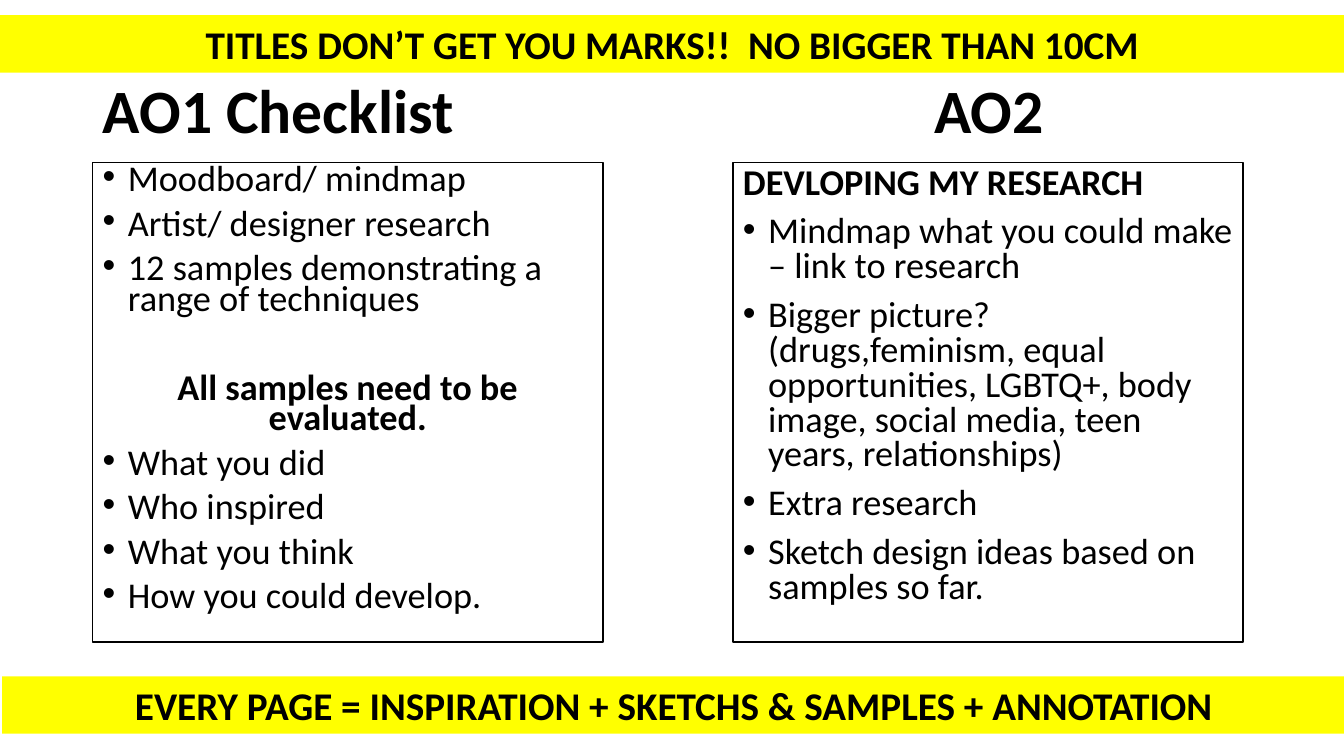
from dataclasses import dataclass

from lxml import etree
from pptx import Presentation
from pptx.dml.color import RGBColor
from pptx.enum.shapes import MSO_SHAPE
from pptx.enum.text import MSO_ANCHOR, MSO_AUTO_SIZE, PP_ALIGN
from pptx.oxml.ns import qn
from pptx.util import Inches, Pt

RECT = MSO_SHAPE.RECTANGLE
LEFT, CENTER = PP_ALIGN.LEFT, PP_ALIGN.CENTER
TOP, MIDDLE = MSO_ANCHOR.TOP, MSO_ANCHOR.MIDDLE
NO_FIT = MSO_AUTO_SIZE.NONE
FONT = "Calibri"
BLACK, WHITE, YELLOW = "000000", "FFFFFF", "FFFF00"
HEADING_SIZE, BODY_SIZE, BANNER_SIZE = 44, 25.9, 28
PANEL_TOP, PANEL_W, PANEL_H = 1.61, 5.06, 4.76
HEADING_TOP, HEADING_H = 0.4, 1.45
BANNER_H = 0.57


@dataclass
class Line:
    text: str
    bullet: bool = True
    bold: bool = False
    align: PP_ALIGN = LEFT
    before: float = 10


@dataclass
class Panel:
    left: float
    spacing: float
    lines: list[Line]


@dataclass
class Banner:
    text: str
    left: float
    top: float
    width: float
    wrap: bool


PANELS = [
    Panel(0.92, 0.7, [
        Line("Moodboard/ mindmap"),
        Line("Artist/ designer research"),
        Line("12 samples demonstrating a range of techniques"),
        Line("All samples need to be evaluated.", False, True, CENTER, 42),
        Line("What you did"),
        Line("Who inspired"),
        Line("What you think"),
        Line("How you could develop."),
    ]),
    Panel(7.27, 0.8, [
        Line("DEVLOPING MY RESEARCH", False, True),
        Line("Mindmap what you could make – link to research"),
        Line("Bigger picture? (drugs,feminism, equal opportunities, LGBTQ+, "
             "body image, social media, teen years, relationships)"),
        Line("Extra research"),
        Line("Sketch design ideas based on samples so far."),
    ]),
]

BANNERS = [
    Banner("EVERY PAGE = INSPIRATION + SKETCHS & SAMPLES + ANNOTATION",
           0.02, 6.71, 13.32, False),
    Banner("TITLES DON’T GET YOU MARKS!!  NO BIGGER THAN 10CM",
           0, 0.15, 13.33, True),
]


def rgb(value: str) -> RGBColor:
    return RGBColor.from_string(value)


def add_run(p, text: str, size: float, bold: bool) -> None:
    r = p.add_run()
    r.text = text
    r.font.name = FONT
    r.font.size = Pt(size)
    r.font.bold = bold
    r.font.color.rgb = rgb(BLACK)


def add_bullet(p) -> None:
    p_pr = p._p.get_or_add_pPr()
    p_pr.set("marL", str(Inches(0.25)))
    p_pr.set("indent", str(Inches(-0.25)))
    etree.SubElement(p_pr, qn("a:buFont")).set("typeface", "Arial")
    etree.SubElement(p_pr, qn("a:buChar")).set("char", "•")


def set_frame(tf, anchor: MSO_ANCHOR, wrap: bool = True) -> None:
    tf.auto_size = NO_FIT
    tf.word_wrap = wrap
    tf.vertical_anchor = anchor


def fill_heading(sp, text: str, align: PP_ALIGN) -> None:
    set_frame(sp.text_frame, MIDDLE)
    p = sp.text_frame.paragraphs[0]
    p.alignment = align
    p.line_spacing = 0.9
    add_run(p, text, HEADING_SIZE, True)


def add_rect(slide, left: float, top: float, width: float, height: float,
             fill: str):
    sp = slide.shapes.add_shape(RECT, Inches(left), Inches(top),
                                Inches(width), Inches(height))
    sp.shadow.inherit = False
    sp.fill.solid()
    sp.fill.fore_color.rgb = rgb(fill)
    return sp


def add_panel(slide, panel: Panel) -> None:
    sp = add_rect(slide, panel.left, PANEL_TOP, PANEL_W, PANEL_H, WHITE)
    sp.line.color.rgb = rgb(BLACK)
    sp.line.width = Pt(1)
    tf = sp.text_frame
    set_frame(tf, TOP)
    for i, line in enumerate(panel.lines):
        p = tf.add_paragraph() if i else tf.paragraphs[0]
        p.alignment = line.align
        p.line_spacing = panel.spacing
        p.space_before = Pt(line.before if i else 0)
        if line.bullet:
            add_bullet(p)
        add_run(p, line.text, BODY_SIZE, line.bold)


def add_banner(slide, banner: Banner) -> None:
    sp = add_rect(slide, banner.left, banner.top, banner.width, BANNER_H,
                  YELLOW)
    sp.line.fill.background()
    set_frame(sp.text_frame, TOP, banner.wrap)
    p = sp.text_frame.paragraphs[0]
    p.alignment = CENTER
    add_run(p, banner.text, BANNER_SIZE, True)


def main() -> None:
    prs = Presentation()
    prs.slide_width, prs.slide_height = Inches(13.33), Inches(7.5)
    slide = prs.slides.add_slide(prs.slide_layouts[5])

    # Headings
    title = slide.shapes.title
    title.left, title.top = Inches(PANELS[0].left), Inches(HEADING_TOP)
    title.width, title.height = Inches(PANEL_W), Inches(HEADING_H)
    fill_heading(title, "AO1 Checklist", LEFT)
    second = slide.shapes.add_textbox(Inches(6.82), Inches(HEADING_TOP),
                                      Inches(5.98), Inches(HEADING_H))
    fill_heading(second, "AO2", CENTER)

    # Checklists
    for panel in PANELS:
        add_panel(slide, panel)

    # Yellow reminders
    for banner in BANNERS:
        add_banner(slide, banner)

    prs.save("out.pptx")


if __name__ == "__main__":
    main()
